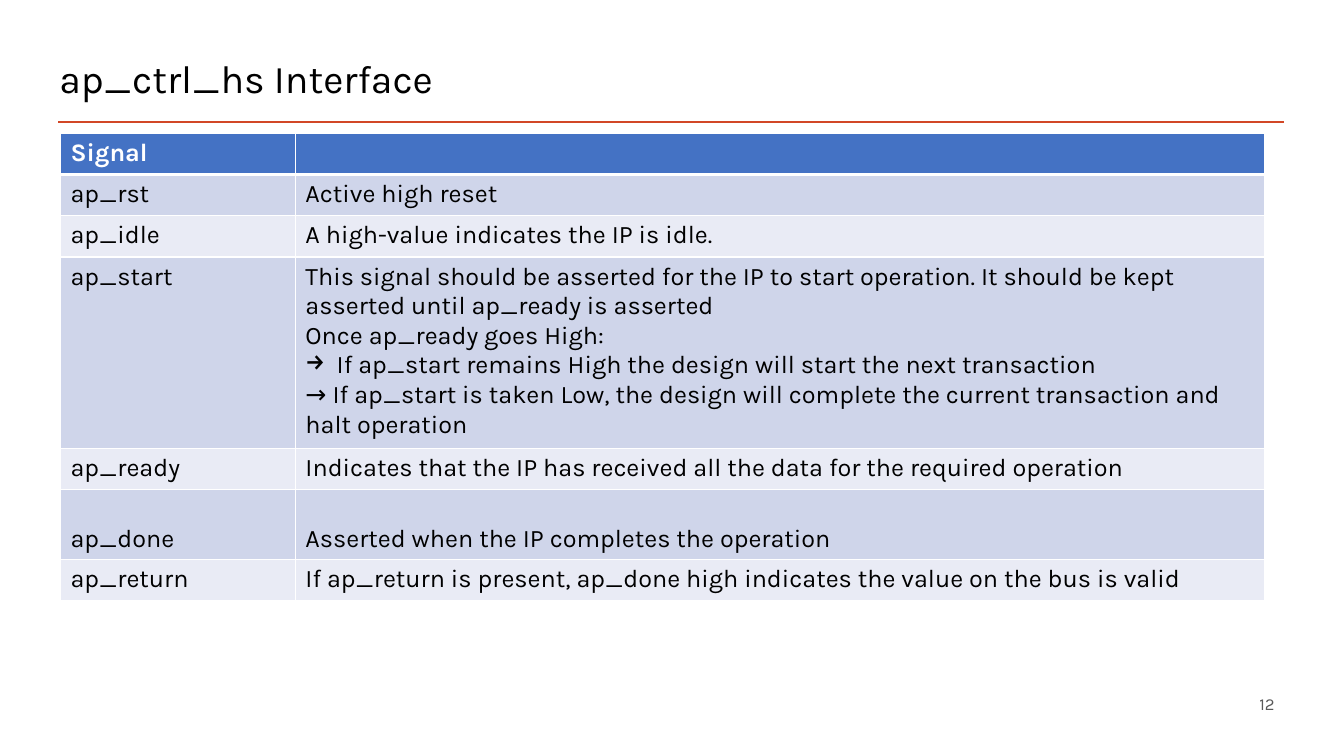
from lxml.etree import SubElement
from pptx import Presentation
from pptx.dml.color import RGBColor
from pptx.enum.shapes import MSO_CONNECTOR
from pptx.enum.text import MSO_ANCHOR, PP_ALIGN
from pptx.oxml.ns import qn
from pptx.util import Inches, Pt

FONT = "Karla"
COLORS = {
    "text": "000000",
    "rule": "D24726",
    "page": "595959",
    "white": "FFFFFF",
    "header": "4472C4",
    "odd": "CFD5EA",
    "even": "E9EBF5",
}
ARROW = "→"
BULLET_INDENT = Inches(0.31)
COLUMN_WIDTHS = (2.33, 9.61)
ROW_HEIGHT = 0.41
TALL_ROWS = {"ap_start": 1.86, "ap_done": 0.69}
SIGNALS = [
    ("Signal", []),
    ("ap_rst", ["Active high reset"]),
    ("ap_idle", ["A high-value indicates the IP is idle."]),
    ("ap_start", [
        "This signal should be asserted for the IP to start operation. "
        "It should be kept asserted until ap_ready is asserted",
        "Once ap_ready goes High:",
        ("If ap_start remains High the design will start the next transaction", ARROW),
        "→ If ap_start is taken Low, the design will complete the current "
        "transaction and halt operation",
    ]),
    ("ap_ready", ["Indicates that the IP has received all the data for the required operation"]),
    ("ap_done", ["Asserted when the IP completes the operation"]),
    ("ap_return", ["If ap_return is present, ap_done high indicates the value on the bus is valid"]),
]


def color(name):
    return RGBColor.from_string(COLORS[name])


def write_paragraph(paragraph, text, size=18, fill="text", bold=False,
                    align=PP_ALIGN.LEFT, spacing=None, bullet=None):
    paragraph.alignment = align
    if spacing:
        paragraph.line_spacing = spacing
    if bullet:
        properties = paragraph._p.get_or_add_pPr()
        properties.set("marL", str(BULLET_INDENT))
        properties.set("indent", str(-BULLET_INDENT))
        SubElement(properties, qn("a:buChar"), char=bullet)
    run = paragraph.add_run()
    run.text = text
    run.font.name = FONT
    run.font.size = Pt(size)
    run.font.bold = bold
    run.font.color.rgb = color(fill)


def add_text(slide, box, text, **text_format):
    frame = slide.shapes.add_textbox(*map(Inches, box)).text_frame
    frame.word_wrap = True
    frame.vertical_anchor = MSO_ANCHOR.MIDDLE
    write_paragraph(frame.paragraphs[0], text, **text_format)


def add_heading(slide, left, top):
    """Place the title and the rule beneath it."""
    add_text(slide, (left, top, 10, 0.7), "ap_ctrl_hs Interface", size=28, spacing=0.9)
    rule_left, rule_top = left + 0.09, top + 0.76
    rule = slide.shapes.add_connector(
        MSO_CONNECTOR.STRAIGHT, Inches(rule_left), Inches(rule_top),
        Inches(rule_left + 12.16), Inches(rule_top))
    rule.line.color.rgb = color("rule")
    rule.line.width = Pt(2)
    SubElement(rule._element.spPr, qn("a:effectLst"))


def set_borders(cell, widths):
    """Draw white borders; widths maps each side (L, R, T, B) to points."""
    properties = cell._tc.get_or_add_tcPr()
    for side, width in widths.items():
        line = SubElement(properties, qn(f"a:ln{side}"), w=str(Pt(width)))
        solid = SubElement(line, qn("a:solidFill"))
        SubElement(solid, qn("a:srgbClr"), val=COLORS["white"])


def fill_cell(cell, row_index, items):
    is_header = row_index == 0
    set_borders(cell, {"L": 1, "R": 1, "T": 3 if row_index == 1 else 1,
                       "B": 3 if is_header else 1})
    cell.fill.solid()
    cell.fill.fore_color.rgb = color(
        "header" if is_header else "odd" if row_index % 2 else "even")
    frame = cell.text_frame
    for index, item in enumerate(items):
        paragraph = frame.add_paragraph() if index else frame.paragraphs[0]
        text, bullet = item if isinstance(item, tuple) else (item, None)
        write_paragraph(paragraph, text, bold=is_header, bullet=bullet,
                        fill="white" if is_header else "text")


def add_signal_table(slide, left, top):
    heights = [TALL_ROWS.get(signal, ROW_HEIGHT) for signal, _ in SIGNALS]
    table = slide.shapes.add_table(
        len(SIGNALS), len(COLUMN_WIDTHS), Inches(left), Inches(top),
        Inches(sum(COLUMN_WIDTHS)), Inches(sum(heights))).table
    for column, width in zip(table.columns, COLUMN_WIDTHS):
        column.width = Inches(width)
    for row_index, (signal, description) in enumerate(SIGNALS):
        table.rows[row_index].height = Inches(heights[row_index])
        for column_index, items in enumerate(([signal], description)):
            cell = table.cell(row_index, column_index)
            fill_cell(cell, row_index, items)
            if signal == "ap_done":
                cell.vertical_anchor = MSO_ANCHOR.BOTTOM


def main():
    presentation = Presentation()
    presentation.slide_width = Inches(13.33)
    presentation.slide_height = Inches(7.5)
    slide = presentation.slides.add_slide(presentation.slide_layouts[6])
    add_heading(slide, 0.49, 0.45)
    add_signal_table(slide, 0.6, 1.32)
    add_text(slide, (9.16, 6.78, 3.58, 0.4), "12", size=12, fill="page",
             align=PP_ALIGN.RIGHT)
    presentation.save("out.pptx")


if __name__ == "__main__":
    main()
